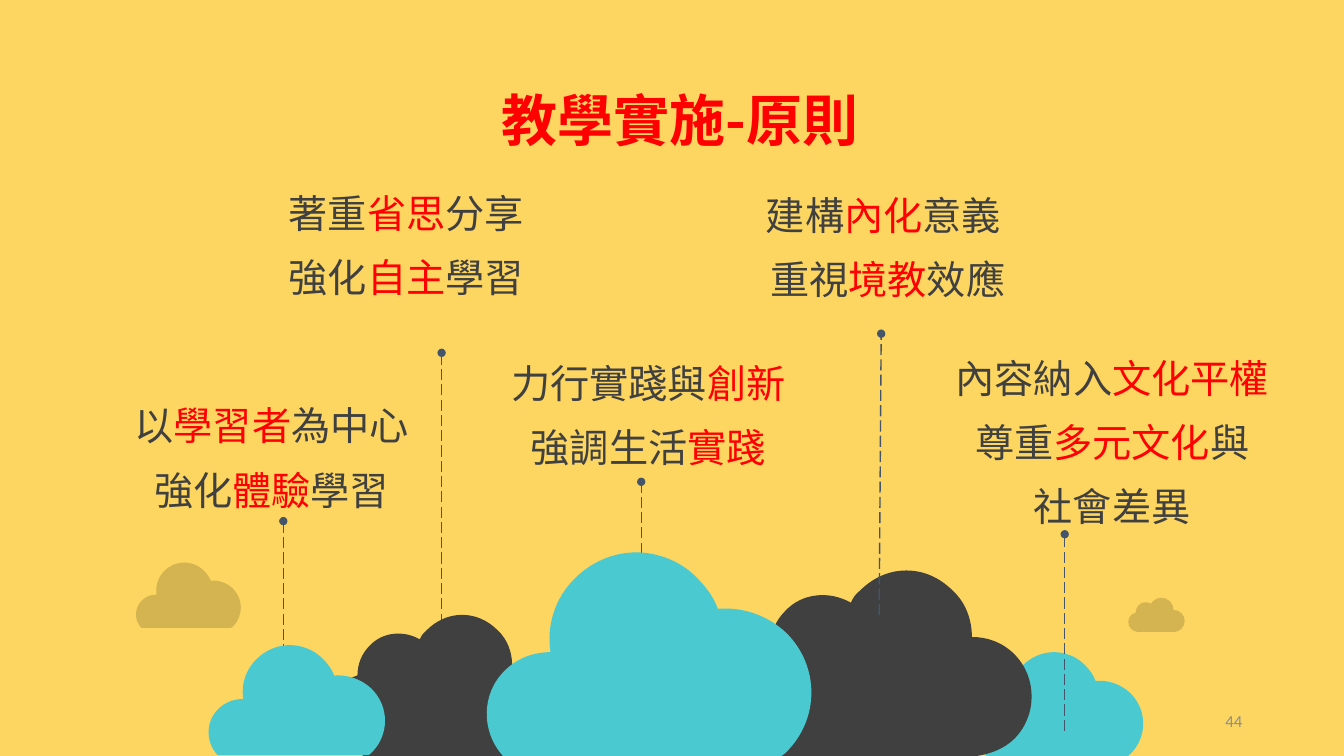
from dataclasses import dataclass

from lxml import etree
from pptx import Presentation
from pptx import util as u
from pptx.dml.color import RGBColor
from pptx.enum import dml, shapes, text
from pptx.oxml.ns import qn


@dataclass(frozen=True)
class Theme:
    sky: str = "FDD661"
    teal: str = "4BC9D0"
    dark: str = "404040"
    accent: str = "FF0000"
    stem: str = "44546A"
    shade: str = "000000"
    muted: str = "8C8C8C"
    font: str = "Noto Sans CJK SC"
    number_font: str = "Calibri"
    title_size: int = 40
    body_size: int = 28
    number_size: int = 12


THEME = Theme()
WIDTH, HEIGHT = 13.33, 7.5

# Outlines: size, then a start point followed by Bezier triples or single line ends.
FLAT_CLOUD = ((322, 202), [
    [(148, 0)],
    [(126, 0), (104, 9), (87, 26)],
    [(67, 46), (59, 73), (63, 99)],
    [(46, 99), (30, 105), (18, 117)],
    [(-6, 140), (-6, 178), (16, 202)],
    [(292, 202)],
    [(294, 201), (296, 199), (297, 198)],
    [(330, 165), (330, 113), (297, 80)],
    [(278, 62), (253, 54), (229, 56)],
    [(225, 45), (218, 35), (209, 26)],
    [(193, 9), (170, 0), (148, 0)],
])
ROUND_CLOUD = ((300, 184), [
    [(176, 0)],
    [(159, 0), (143, 7), (130, 20)],
    [(126, 23), (123, 27), (121, 32)],
    [(100, 20), (73, 22), (56, 40)],
    [(45, 51), (40, 65), (40, 79)],
    [(31, 82), (23, 86), (16, 93)],
    [(-5, 114), (-5, 148), (16, 168)],
    [(25, 177), (36, 182), (47, 183)],
    [(47, 184)],
    [(54, 184)],
    [(241, 184)],
    [(246, 184)],
    [(246, 184)],
    [(259, 182), (273, 177), (283, 167)],
    [(306, 144), (306, 106), (283, 83)],
    [(271, 71), (256, 66), (241, 66)],
    [(241, 49), (235, 32), (222, 20)],
    [(209, 7), (193, 0), (176, 0)],
])

# Each principle: box, then lines of text with the stressed words between bars.
PRINCIPLES = [
    ((1.13, 3.83, 3.13, 1.35), ["以|學習者|為中心", "強化|體驗|學習"]),
    ((2.65, 1.72, 2.76, 1.35), ["著重|省思|分享", "強化|自主|學習"]),
    ((4.75, 3.41, 3.36, 1.35), ["力行實踐與|創新|", "強調生活|實踐|"]),
    ((7.38, 1.74, 2.85, 1.35), ["建構|內化|意義 ", "重視|境教|效應"]),
    ((9.29, 3.36, 3.48, 2), ["內容納入|文化平權|", "尊重|多元文化|與", "社會差異"]),
]


def color(value):
    return RGBColor.from_string(value)


def add_sky(page):
    sky = page.shapes.add_shape(shapes.MSO_SHAPE.RECTANGLE, 0, 0,
                                u.Inches(WIDTH), u.Inches(HEIGHT))
    sky.shadow.inherit = False
    sky.fill.solid()
    sky.fill.fore_color.rgb = color(THEME.sky)
    sky.line.color.rgb = color(THEME.sky)
    sky.line.width = u.Pt(1)


def draw_curves(cloud, kind):
    """Give the freeform a curved outline that fills its frame."""
    (width, height), outline = kind
    route = next(cloud._element.iter(qn("a:path")))
    for child in list(route):
        route.remove(child)
    route.set("w", str(width))
    route.set("h", str(height))
    for index, points in enumerate(outline):
        tag = "a:cubicBezTo" if len(points) == 3 else "a:lnTo" if index else "a:moveTo"
        command = etree.SubElement(route, qn(tag))
        for x, y in points:
            etree.SubElement(command, qn("a:pt"), x=str(x), y=str(y))
    etree.SubElement(route, qn("a:close"))


def add_cloud(page, box, kind, fill, opacity=100):
    left, top, width, height = (u.Inches(value) for value in box)
    right, bottom = left + width, top + height
    builder = page.shapes.build_freeform(left, top)
    builder.add_line_segments([(right, top), (right, bottom), (left, bottom)], close=True)
    cloud = builder.convert_to_shape()
    draw_curves(cloud, kind)
    cloud.shadow.inherit = False
    cloud.fill.solid()
    cloud.fill.fore_color.rgb = color(fill)
    cloud.line.fill.background()
    if opacity < 100:
        tint = cloud._element.spPr.find(qn("a:solidFill"))[0]
        etree.SubElement(tint, qn("a:alpha")).set("val", str(opacity * 1000))


def add_stem(page, start, end):
    """Draw a dashed line with a dot at its end."""
    stem = page.shapes.add_connector(shapes.MSO_CONNECTOR.STRAIGHT,
                                     *(u.Inches(value) for value in (*start, *end)))
    stem.line.color.rgb = color(THEME.stem)
    stem.line.width = u.Pt(1)
    stem.line.dash_style = dml.MSO_LINE.LONG_DASH
    properties = stem._element.spPr
    etree.SubElement(properties.find(qn("a:ln")), qn("a:tailEnd")).set("type", "oval")
    etree.SubElement(properties, qn("a:effectLst"))


def add_text_frame(page, box):
    frame = page.shapes.add_textbox(*(u.Inches(value) for value in box)).text_frame
    frame.word_wrap = True
    return frame


def style(font, name, size, fill, bold=False):
    font.name, font.size, font.bold = name, u.Pt(size), bold
    font.color.rgb = color(fill)


def style_east_asian(span):
    properties = span._r.get_or_add_rPr()
    etree.SubElement(properties, qn("a:ea")).set("typeface", THEME.font)


def add_principle(page, box, lines):
    frame = add_text_frame(page, box)
    frame.auto_size = text.MSO_AUTO_SIZE.SHAPE_TO_FIT_TEXT
    frame.margin_left = frame.margin_right = u.Inches(.12)
    frame.margin_top = frame.margin_bottom = u.Inches(.06)
    for index, line in enumerate(lines):
        para = frame.add_paragraph() if index else frame.paragraphs[0]
        para.alignment = text.PP_ALIGN.CENTER
        para.line_spacing = 1.2
        if index:
            para.space_before = u.Pt(THEME.body_size * .2)
        for order, words in enumerate(line.split("|")):
            if words:
                span = para.add_run()
                span.text = words
                style(span.font, THEME.font, THEME.body_size,
                      THEME.accent if order % 2 else THEME.dark)
                style_east_asian(span)


def add_title(page, box, words):
    frame = add_text_frame(page, box)
    frame.auto_size = text.MSO_AUTO_SIZE.SHAPE_TO_FIT_TEXT
    frame.text = words
    para = frame.paragraphs[0]
    para.line_spacing = 1.1
    style(para.runs[0].font, THEME.font, THEME.title_size, THEME.accent, bold=True)
    style_east_asian(para.runs[0])


def add_page_number(page, box, number):
    frame = add_text_frame(page, box)
    frame.vertical_anchor = text.MSO_ANCHOR.MIDDLE
    frame.text = number
    para = frame.paragraphs[0]
    para.alignment = text.PP_ALIGN.RIGHT
    style(para.runs[0].font, THEME.number_font, THEME.number_size, THEME.muted)


def add_scenery(page):
    add_sky(page)
    add_stem(page, (4.38, 6.5), (4.38, 3.5))
    add_stem(page, (2.81, 6.5), (2.81, 5.17))
    add_cloud(page, (9.7, 6.47, 1.64, 1.03), FLAT_CLOUD, THEME.teal)
    add_cloud(page, (7.23, 5.66, 3, 1.84), ROUND_CLOUD, THEME.dark)
    add_cloud(page, (3.24, 6.1, 2.29, 1.4), ROUND_CLOUD, THEME.dark)
    add_cloud(page, (2.07, 6.4, 1.75, 1.09), FLAT_CLOUD, THEME.teal)
    add_cloud(page, (1.35, 5.58, 1.04, .65), FLAT_CLOUD, THEME.shade, opacity=16)
    add_cloud(page, (11.19, 5.93, .56, .34), ROUND_CLOUD, THEME.shade, opacity=16)
    add_stem(page, (10.56, 7.25), (10.56, 5.3))
    add_stem(page, (6.36, 6.1), (6.36, 4.78))
    add_stem(page, (8.72, 6.1), (8.74, 3.31))
    add_cloud(page, (4.83, 5.48, 3.22, 2.02), FLAT_CLOUD, THEME.teal)


def main():
    deck = Presentation()
    deck.slide_width, deck.slide_height = u.Inches(WIDTH), u.Inches(HEIGHT)
    page = deck.slides.add_slide(deck.slide_layouts[6])
    add_scenery(page)
    for box, lines in PRINCIPLES:
        add_principle(page, box, lines)
    add_title(page, (4.88, .73, 4.5, .79), "教學實施-原則")
    add_page_number(page, (9.42, 6.95, 3, .4), "44")
    deck.save("out.pptx")


if __name__ == "__main__":
    main()
